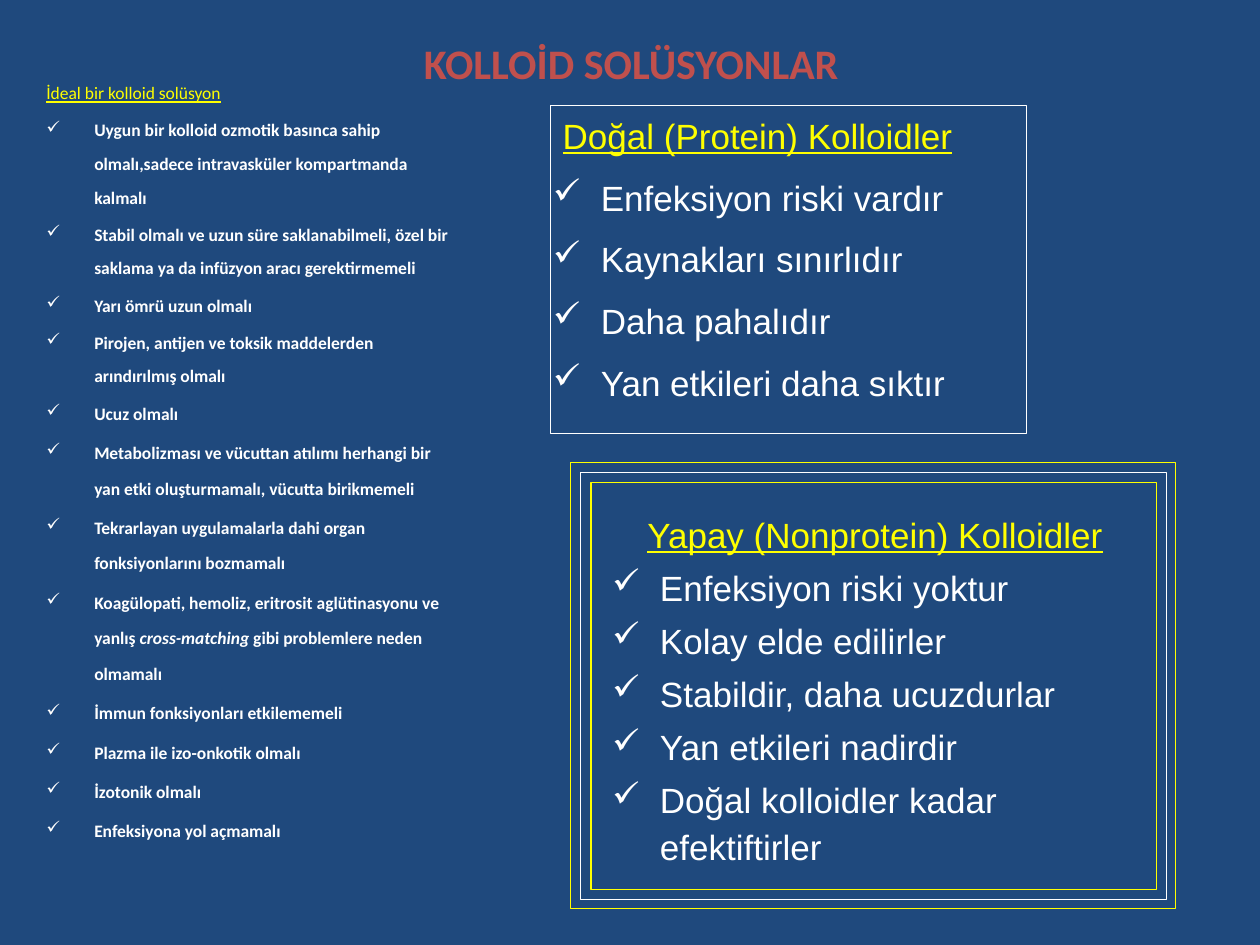
from dataclasses import dataclass

from lxml import etree
from pptx import Presentation
from pptx.dml.color import RGBColor
from pptx.enum.shapes import MSO_SHAPE
from pptx.enum.text import MSO_ANCHOR, PP_ALIGN
from pptx.oxml.ns import qn
from pptx.slide import Slide
from pptx.util import Inches, Pt

NAVY = RGBColor(0x1F, 0x49, 0x7D)
RED = RGBColor(0xC0, 0x50, 0x4D)
YELLOW = RGBColor(0xFF, 0xFF, 0x00)
WHITE = RGBColor(0xFF, 0xFF, 0xFF)
RECTANGLE = MSO_SHAPE.RECTANGLE
CENTER, LEFT = PP_ALIGN.CENTER, PP_ALIGN.LEFT
MIDDLE = MSO_ANCHOR.MIDDLE
INDENT = Inches(0.38)
TITLE_ONLY = 5


@dataclass
class Box:
    left: float
    top: float
    width: float
    height: float

    def lengths(self) -> list[int]:
        return [Inches(value) for value in (self.left, self.top, self.width, self.height)]


@dataclass
class Item:
    """A bulleted line; text between asterisks is italic."""
    text: str
    spacing: float


@dataclass
class Panel:
    box: Box
    heading: str
    heading_spacing: float
    items: list[Item]
    font: str
    size: int
    bold: bool = False
    alignment: PP_ALIGN = LEFT


@dataclass
class Frame:
    box: Box
    color: RGBColor


def items(spacing: float, *texts: str) -> list[Item]:
    return [Item(text, spacing) for text in texts]


PANELS = [
    Panel(
        Box(0.27, 0.52, 3.47, 6.98), "İdeal bir kolloid solüsyon", 1.5,
        items(
            1.6,
            "Uygun bir kolloid ozmotik basınca sahip olmalı,sadece intravasküler "
            "kompartmanda kalmalı",
            "Stabil olmalı ve uzun süre saklanabilmeli, özel bir saklama ya da "
            "infüzyon aracı gerektirmemeli",
            "Yarı ömrü uzun olmalı",
            "Pirojen, antijen ve toksik maddelerden arındırılmış olmalı",
            "Ucuz olmalı",
        ) + items(
            1.7,
            "Metabolizması ve vücuttan atılımı herhangi bir yan etki oluşturmamalı, "
            "vücutta birikmemeli",
            "Tekrarlayan uygulamalarla dahi organ fonksiyonlarını bozmamalı",
            "Koagülopati, hemoliz, eritrosit aglütinasyonu ve yanlış "
            "*cross-matching* gibi problemlere neden olmamalı",
            "İmmun fonksiyonları etkilememeli",
            "Plazma ile izo-onkotik olmalı",
            "İzotonik olmalı",
            "Enfeksiyona yol açmamalı",
        ),
        "Calibri", 10, bold=True,
    ),
    Panel(
        Box(4.29, 0.76, 5.43, 2.68), " Doğal (Protein) Kolloidler", 1.3,
        items(1.3, "Enfeksiyon riski vardır", "Kaynakları sınırlıdır",
              "Daha pahalıdır", "Yan etkileri daha sıktır"),
        "Arial", 20,
    ),
    Panel(
        Box(4.76, 3.99, 4.37, 3.23), "Yapay (Nonprotein) Kolloidler", 1.1,
        items(1.1, "Enfeksiyon riski yoktur", "Kolay elde edilirler",
              "Stabildir, daha ucuzdurlar", "Yan etkileri nadirdir",
              "Doğal kolloidler kadar efektiftirler"),
        "Arial", 20, alignment=CENTER,
    ),
]

FRAMES = [
    Frame(Box(4.37, 0.84, 3.78, 2.6), WHITE),
    Frame(Box(4.69, 3.83, 4.49, 3.23), YELLOW),
    Frame(Box(4.53, 3.67, 4.8, 3.54), YELLOW),
    Frame(Box(4.61, 3.75, 4.65, 3.39), WHITE),
]


def format_paragraph(paragraph, panel: Panel, spacing: float, color: RGBColor) -> None:
    paragraph.line_spacing = spacing
    paragraph.space_before = Pt(panel.size * 0.2)
    paragraph.font.name = panel.font
    paragraph.font.size = Pt(panel.size)
    paragraph.font.color.rgb = color
    properties = paragraph._p.get_or_add_pPr()
    properties.set("marL", str(INDENT))
    properties.set("indent", str(-INDENT))


def add_check_bullet(paragraph) -> None:
    properties = paragraph._p.get_or_add_pPr()
    bullet_color = etree.Element(qn("a:buClr"))
    etree.SubElement(bullet_color, qn("a:srgbClr"), val=str(WHITE))
    bullet = etree.Element(qn("a:buChar"), char="✓")
    default_run = properties.find(qn("a:defRPr"))
    default_run.addprevious(bullet_color)
    default_run.addprevious(bullet)


def add_panel(slide: Slide, panel: Panel) -> None:
    text_frame = slide.shapes.add_textbox(*panel.box.lengths()).text_frame
    text_frame.word_wrap = True

    heading = text_frame.paragraphs[0]
    heading.alignment = panel.alignment
    format_paragraph(heading, panel, panel.heading_spacing, YELLOW)
    label = panel.heading.lstrip()
    if label != panel.heading:
        heading.add_run().text = " "
    run = heading.add_run()
    run.text = label
    run.font.underline = True

    for item in panel.items:
        paragraph = text_frame.add_paragraph()
        format_paragraph(paragraph, panel, item.spacing, WHITE)
        paragraph.font.bold = panel.bold
        add_check_bullet(paragraph)
        for index, part in enumerate(item.text.split("*")):
            run = paragraph.add_run()
            run.text = part
            if index % 2:
                run.font.italic = True


def add_frame(slide: Slide, frame: Frame) -> None:
    shape = slide.shapes.add_shape(RECTANGLE, *frame.box.lengths())
    shape.shadow.inherit = False
    shape.fill.background()
    shape.line.color.rgb = frame.color
    shape.line.width = Pt(0.75)


def add_title(slide: Slide, text: str, box: Box) -> None:
    title = slide.shapes.title
    title.left, title.top, title.width, title.height = box.lengths()
    title.text_frame.text = text
    title.text_frame.vertical_anchor = MIDDLE
    paragraph = title.text_frame.paragraphs[0]
    paragraph.alignment = CENTER
    paragraph.font.name = "Calibri"
    paragraph.font.size = Pt(24)
    paragraph.font.bold = True
    paragraph.font.color.rgb = RED


def main() -> None:
    presentation = Presentation()
    presentation.slide_width, presentation.slide_height = Inches(10), Inches(7.5)
    slide = presentation.slides.add_slide(presentation.slide_layouts[TITLE_ONLY])
    slide.background.fill.solid()
    slide.background.fill.fore_color.rgb = NAVY
    add_title(slide, "KOLLOİD SOLÜSYONLAR", Box(0.51, 0, 9, 0.99))
    for panel in PANELS:
        add_panel(slide, panel)
    for frame in FRAMES:
        add_frame(slide, frame)
    presentation.save("out.pptx")


if __name__ == "__main__":
    main()
